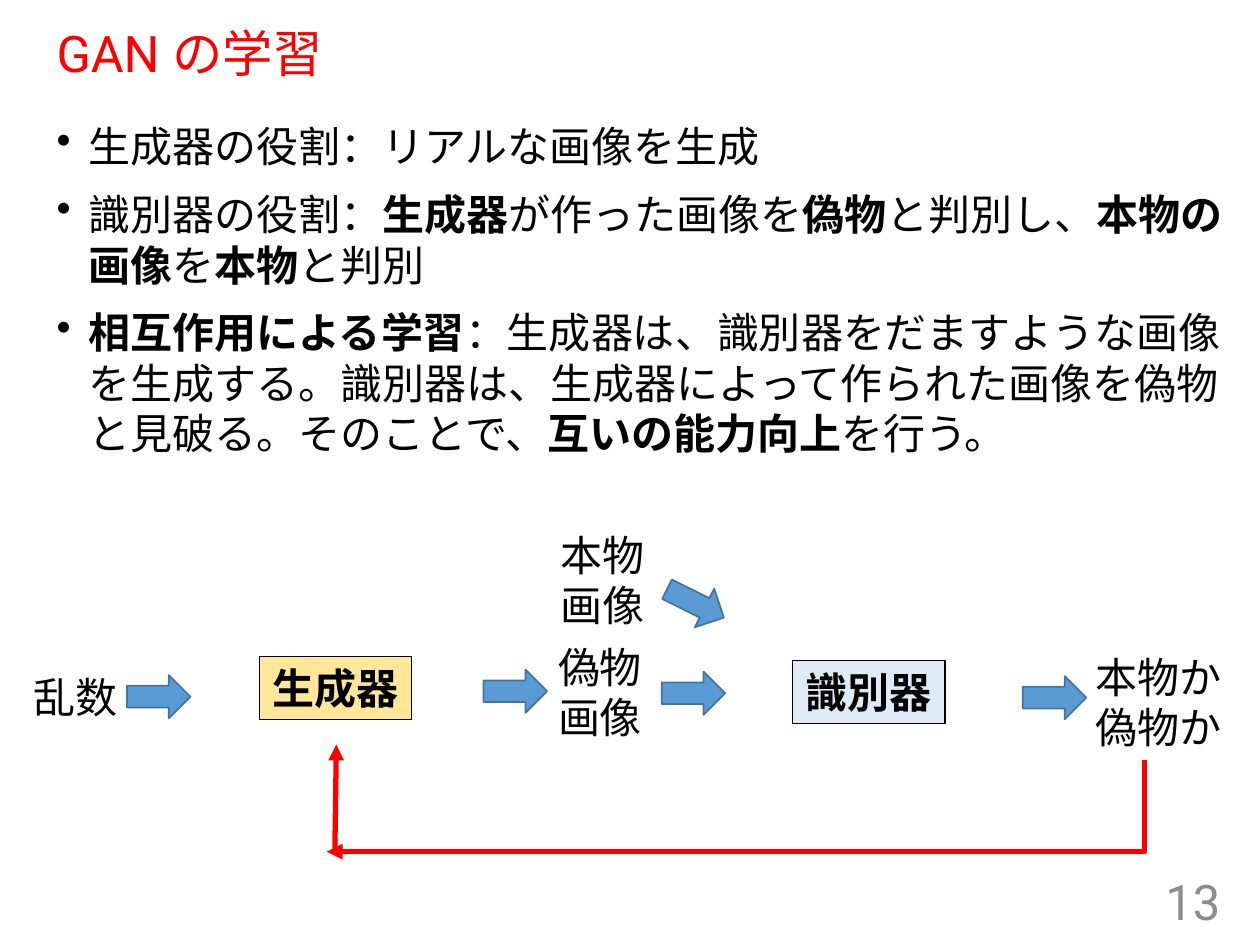
from lxml.etree import SubElement
from pptx import Presentation
from pptx.dml.color import RGBColor
from pptx.enum.shapes import MSO_CONNECTOR as Link, MSO_SHAPE as Kind
from pptx.enum.text import MSO_ANCHOR as Anchor, PP_ALIGN as Align
from pptx.oxml.ns import qn
from pptx.util import Cm, Pt

HUES = {
    "red": "FF0000", "black": "000000", "gray": "8C8C8C",
    "gold": "FFE699", "pale": "DEEBF7", "blue": "5B9BD5", "navy": "43739E",
}
ROLES = [
    "生成器の役割：リアルな画像を生成",
    "識別器の役割：*生成器*が作った画像を*偽物*と判別し、*本物の画像*を*本物*と判別",
    "*相互作用による学習*：生成器は、識別器をだますような画像を生成する。"
    "識別器は、生成器によって作られた画像を偽物と見破る。"
    "そのことで、*互いの能力向上*を行う。",
]
LABELS = [
    (0.43, 13.41, 2.82, 1.27, ["乱数"]),
    (11.0, 12.8, 2.82, 2.31, ["偽物画像"]),
    (21.84, 13.0, 4.65, 2.31, ["本物か", "偽物か"]),
    (11.05, 10.54, 2.82, 2.31, ["本物画像"]),
]
ARROWS = [
    (2.56, 13.61, 0), (9.75, 13.5, 0), (20.62, 13.63, 0),
    (13.34, 13.54, 0), (13.38, 11.73, 26.5),
]


def color(name):
    return RGBColor.from_string(HUES[name])


def style(para, size, face, hue="black", bold=None):
    font = para.font
    font.size, font.name, font.bold = Pt(size), face, bold
    font.color.rgb = color(hue)


def add_text(slide, box, lines, size=24, face="Calibri", hue="black"):
    """Add a wrapped text box and return its frame."""
    frame = slide.shapes.add_textbox(*map(Cm, box)).text_frame
    frame.word_wrap = True
    frame.text = "\n".join(lines)
    for para in frame.paragraphs:
        style(para, size, face, hue)
    return frame


def add_bullets(slide, box, items):
    """Add bulleted lines in which *stars* mark bold words."""
    frame = add_text(slide, box, [""] * len(items), face="Roboto")
    for para, item in zip(frame.paragraphs, items):
        para.space_before = Pt(10)
        for num, part in enumerate(item.split("*")):
            if part:
                run = para.add_run()
                run.text = part
                run.font.bold = num % 2 == 1
        props = para._p.get_or_add_pPr()
        props.set("marL", str(Cm(0.64)))
        props.set("indent", str(-Cm(0.64)))
        mark = props.makeelement(qn("a:buChar"), {"char": "•"})
        props.find(qn("a:defRPr")).addprevious(mark)


def add_shape(slide, kind, box, fill, edge, width):
    shape = slide.shapes.add_shape(kind, *map(Cm, box))
    shape.shadow.inherit = False
    shape.fill.solid()
    shape.fill.fore_color.rgb = color(fill)
    shape.line.color.rgb = color(edge)
    shape.line.width = Pt(width)
    return shape


def add_model(slide, left, top, name, fill):
    box = (left, top, 3.07, 1.27)
    shape = add_shape(slide, Kind.RECTANGLE, box, fill, "black", 0.75)
    frame = shape.text_frame
    frame.word_wrap = False
    frame.text = name
    para = frame.paragraphs[0]
    para.alignment = Align.CENTER
    style(para, 24, "Calibri", bold=True)


def add_arrow(slide, left, top, turn):
    box = (left, top, 1.28, 0.87)
    arrow = add_shape(slide, Kind.RIGHT_ARROW, box, "blue", "navy", 1)
    arrow.rotation = turn


def add_link(slide, kind, ends):
    """Add a red line with an arrowhead at its end."""
    link = slide.shapes.add_connector(kind, *map(Cm, ends))
    link.line.color.rgb = color("red")
    link.line.width = Pt(3)
    props = link._element.spPr
    SubElement(props.find(qn("a:ln")), qn("a:tailEnd"), type="triangle")
    SubElement(props, qn("a:effectLst"))
    return link


def add_feedback(slide):
    add_link(slide, Link.STRAIGHT, (6.75, 17.17, 6.78, 15.01))
    link = add_link(slide, Link.ELBOW, (23.08, 15.32, 6.59, 17.17))
    geom = link._element.spPr.find(qn("a:prstGeom"))
    guides = geom.find(qn("a:avLst"))
    SubElement(guides, qn("a:gd"), name="adj1", fmla="val 0")


def main():
    deck = Presentation()
    deck.slide_width, deck.slide_height = Cm(25.4), Cm(19.05)
    slide = deck.slides.add_slide(deck.slide_layouts[6])

    title = add_text(slide, (0.89, 0.48, 23.5, 1.3), ["GAN の学習"],
                     28.8, "Roboto", "red")
    title.vertical_anchor = Anchor.MIDDLE
    title.paragraphs[0].line_spacing = 0.9
    add_bullets(slide, (0.89, 2.31, 24.1, 8.28), ROLES)
    page = add_text(slide, (19.13, 17.65, 5.72, 1.02), ["13"],
                    28, "Roboto", "gray")
    page.vertical_anchor = Anchor.MIDDLE
    page.paragraphs[0].alignment = Align.RIGHT

    add_model(slide, 5.23, 13.23, "生成器", "gold")
    add_model(slide, 15.98, 13.31, "識別器", "pale")
    for *box, lines in LABELS:
        add_text(slide, box, lines)
    for spot in ARROWS:
        add_arrow(slide, *spot)
    add_feedback(slide)
    deck.save("out.pptx")


if __name__ == "__main__":
    main()
